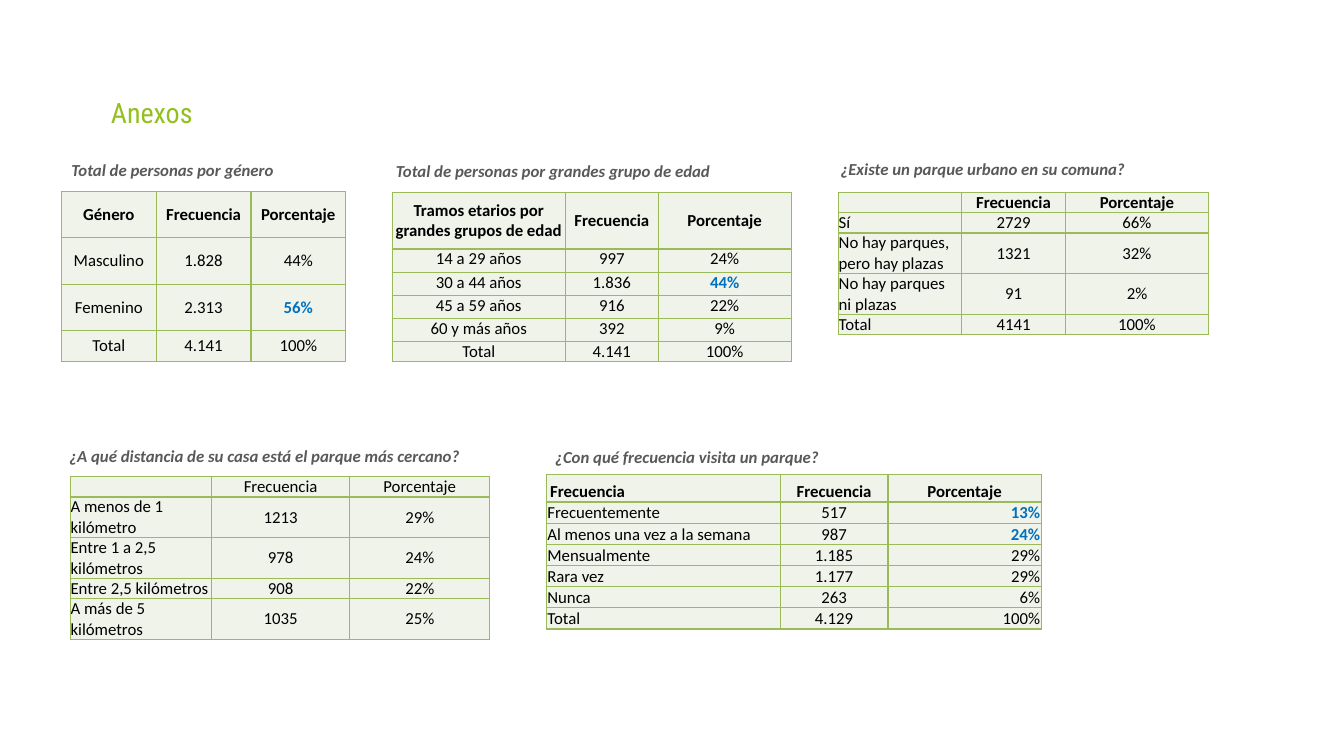
from dataclasses import dataclass

from lxml import etree
from pptx import Presentation
from pptx import util as u
from pptx.dml.color import RGBColor
from pptx.enum import text as t
from pptx.oxml import ns

COLORS = {
    "title": "93C01F",
    "caption": "595959",
    "text": "000000",
    "accent": "0070C0",
    "cell": "EFF3EA",
    "border": "9BBB59",
}
GRID = u.Inches(0.1)  # side of one square of the layout grid
SLIDE_COLUMNS, SLIDE_ROWS = 133.33, 75
CAPTION_ROWS = 3
TOP, MIDDLE, BOTTOM = t.MSO_ANCHOR.TOP, t.MSO_ANCHOR.MIDDLE, t.MSO_ANCHOR.BOTTOM
LEFT, CENTER, RIGHT = t.PP_ALIGN.LEFT, t.PP_ALIGN.CENTER, t.PP_ALIGN.RIGHT


@dataclass(frozen=True)
class Caption:
    text: str
    left: float
    top: float
    width: float


@dataclass(frozen=True)
class Frequencies:
    """A captioned table; all lengths are in grid squares."""
    caption: Caption
    left: float
    top: float
    widths: tuple[float, ...]
    heights: tuple[float, ...]
    cells: tuple[tuple[str, ...], ...]
    header_anchor: t.MSO_ANCHOR = BOTTOM
    label_anchor: t.MSO_ANCHOR = TOP
    value_anchor: t.MSO_ANCHOR = MIDDLE
    label_align: t.PP_ALIGN = LEFT
    percent_align: t.PP_ALIGN = CENTER
    bold_header: bool = True
    accents: tuple[str, ...] = ()
    inset: float = 0


TABLES = (
    Frequencies(
        Caption("Total de personas por género", 6.1, 15.4, 28.1),
        6.1, 19, (9.4, 9.4, 9.4), (4.6, 4.6, 4.6, 3.1),
        (("Género", "Frecuencia", "Porcentaje"),
         ("Masculino", "1.828", "44%"),
         ("Femenino", "2.313", "56%"),
         ("Total", "4.141", "100%")),
        header_anchor=MIDDLE, label_anchor=MIDDLE, label_align=CENTER,
        accents=("56%",)),
    Frequencies(
        Caption("Total de personas por grandes grupo de edad", 38.3, 15.5, 40),
        38.9, 19.1, (17.2, 9.2, 13.2), (5.6, 2.3, 2.3, 2.3, 2.3, 1.9),
        (("Tramos etarios por grandes grupos de edad", "Frecuencia", "Porcentaje"),
         ("14 a 29 años", "997", "24%"),
         ("30 a 44 años", "1.836", "44%"),
         ("45 a 59 años", "916", "22%"),
         ("60 y más años", "392", "9%"),
         ("Total", "4.141", "100%")),
        header_anchor=MIDDLE, value_anchor=TOP, label_align=CENTER,
        accents=("44%",)),
    Frequencies(
        Caption("¿Existe un parque urbano en su comuna?", 82.4, 15.3, 40),
        83.2, 19.1, (12.2, 10.3, 14.2), (2, 2, 4.05, 4.05, 2),
        (("", "Frecuencia", "Porcentaje"),
         ("Sí", "2729", "66%"),
         ("No hay parques, pero hay plazas", "1321", "32%"),
         ("No hay parques ni plazas", "91", "2%"),
         ("Total", "4141", "100%"))),
    Frequencies(
        Caption("¿A qué distancia de su casa está el parque más cercano?", 5.9, 43.7, 42.7),
        7, 47.3, (14, 13.7, 13.9), (2, 4.05, 4.05, 2, 4.05),
        (("", "Frecuencia", "Porcentaje"),
         ("A menos de 1 kilómetro", "1213", "29%"),
         ("Entre 1 a 2,5 kilómetros", "978", "24%"),
         ("Entre 2,5 kilómetros", "908", "22%"),
         ("A más de 5 kilómetros", "1035", "25%")),
        bold_header=False),
    Frequencies(
        Caption("¿Con qué frecuencia visita un parque?", 54.1, 43.8, 71.5),
        54.2, 47.1, (23.2, 10.7, 15.2), (2.7,) + (2.1,) * 6,
        ((" Frecuencia", "Frecuencia", "Porcentaje"),
         ("Frecuentemente", "517", "13%"),
         ("Al menos una vez a la semana", "987", "24%"),
         ("Mensualmente", "1.185", "29%"),
         ("Rara vez", "1.177", "29%"),
         ("Nunca", "263", "6%"),
         ("Total", "4.129", "100%")),
        percent_align=RIGHT, accents=("13%", "24%"), inset=0.1),
)


def squares(count: float) -> u.Emu:
    """Convert grid squares to a length."""
    return u.Emu(round(count * GRID))


def write(frame, text: str, *, size: float = 12, font: str = "Calibri",
          color: str = "text", bold: bool = False, italic: bool = False,
          align: t.PP_ALIGN = LEFT) -> None:
    paragraph = frame.paragraphs[0]
    paragraph.alignment = align
    if not text:  # an empty line keeps its height in the end mark
        etree.SubElement(paragraph._p, ns.qn("a:endParaRPr"), sz=str(size * 100))
        return
    run = paragraph.add_run()
    run.text = text
    run.font.size = u.Pt(size)
    run.font.name = font
    run.font.bold = bold
    run.font.italic = italic
    run.font.color.rgb = RGBColor.from_string(COLORS[color])


def set_margins(holder, inset: float = 0) -> None:
    holder.margin_left = holder.margin_right = holder.margin_top = squares(inset)
    holder.margin_bottom = 0


def draw_borders(cell) -> None:
    properties = cell._tc.get_or_add_tcPr()
    for side in ("lnL", "lnR", "lnT", "lnB"):
        line = etree.SubElement(properties, ns.qn(f"a:{side}"), w=str(u.Pt(1)))
        fill = etree.SubElement(line, ns.qn("a:solidFill"))
        etree.SubElement(fill, ns.qn("a:srgbClr"), val=COLORS["border"])


def add_title(slide, text: str) -> None:
    title = slide.shapes.title
    title.left, title.top = squares(11), squares(9.5)
    title.width, title.height = squares(114.7), squares(3.4)
    frame = title.text_frame
    frame.auto_size = t.MSO_AUTO_SIZE.NONE
    frame.vertical_anchor = TOP
    set_margins(frame)
    write(frame, text, size=20, font="Roboto Condensed", color="title")


def add_caption(slide, caption: Caption) -> None:
    shape = slide.shapes.add_textbox(squares(caption.left), squares(caption.top),
                                     squares(caption.width), squares(CAPTION_ROWS))
    shape.text_frame.word_wrap = True
    write(shape.text_frame, caption.text, color="caption", bold=True, italic=True)


def add_frequencies(slide, data: Frequencies) -> None:
    table = slide.shapes.add_table(
        len(data.heights), len(data.widths), squares(data.left), squares(data.top),
        squares(sum(data.widths)), squares(sum(data.heights))).table
    table.first_row = table.horz_banding = False
    for column, width in zip(table.columns, data.widths):
        column.width = squares(width)
    for row, height in zip(table.rows, data.heights):
        row.height = squares(height)

    body_anchors = (data.label_anchor, data.value_anchor, data.value_anchor)
    body_aligns = (data.label_align, CENTER, data.percent_align)
    header_aligns = (data.label_align, CENTER, CENTER)
    for row_index, texts in enumerate(data.cells):
        header = row_index == 0
        aligns = header_aligns if header else body_aligns
        for column_index, text in enumerate(texts):
            cell = table.cell(row_index, column_index)
            accent = text in data.accents
            set_margins(cell, 0 if header else data.inset)
            cell.vertical_anchor = (data.header_anchor if header
                                    else body_anchors[column_index])
            draw_borders(cell)
            cell.fill.solid()
            cell.fill.fore_color.rgb = RGBColor.from_string(COLORS["cell"])
            write(cell.text_frame, text, color="accent" if accent else "text",
                  bold=accent or (header and data.bold_header),
                  align=aligns[column_index])


def main() -> None:
    presentation = Presentation()
    presentation.slide_width = squares(SLIDE_COLUMNS)
    presentation.slide_height = squares(SLIDE_ROWS)
    title_only = presentation.slide_layouts.get_by_name("Title Only")
    slide = presentation.slides.add_slide(title_only)
    add_title(slide, "Anexos")
    for data in TABLES:
        add_frequencies(slide, data)
        add_caption(slide, data.caption)
    presentation.save("out.pptx")


if __name__ == "__main__":
    main()
